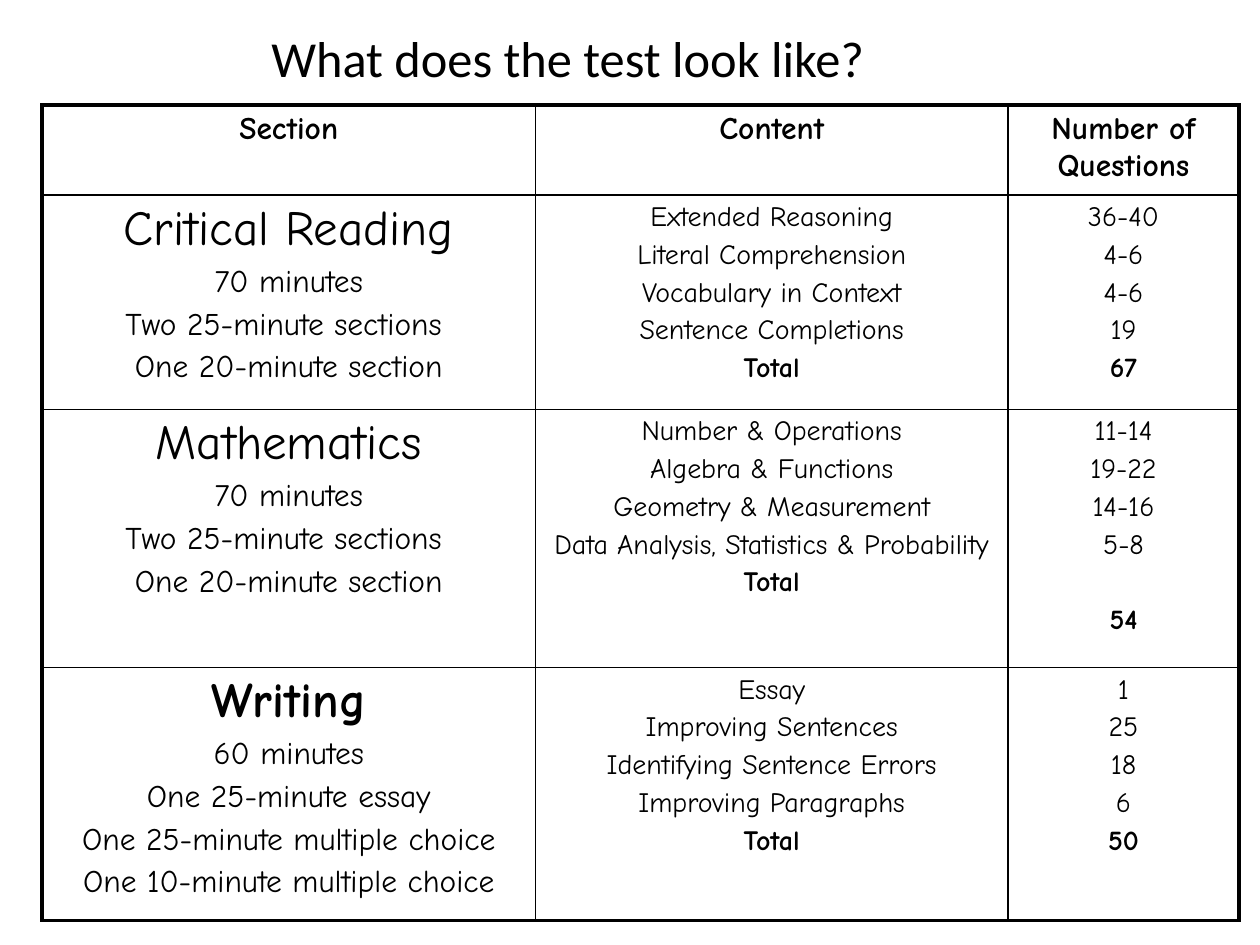
from lxml import etree
from pptx import Presentation
from pptx.dml.color import RGBColor
from pptx.enum.text import MSO_ANCHOR, PP_ALIGN
from pptx.oxml.ns import qn
from pptx.util import Pt

CENTER = PP_ALIGN.CENTER
MIDDLE = MSO_ANCHOR.MIDDLE
TOP = MSO_ANCHOR.TOP
TITLE_ONLY = 5

COLORS = {"ink": "000000"}
TITLE_FONT, TABLE_FONT = "Calibri", "Comic Neue"
HEADING_SIZE, DETAIL_SIZE, ITEM_SIZE = 28, 18, 16
SPACE_SHARE = 0.2
BLANK_LINE = 21.6
OUTER_LINE, INNER_LINE = 2.25, 1

TITLE = "What does the test look like?"
HEADERS = ["Section", "Content", "Number of Questions"]
SECTIONS = [
    {
        "name": "Critical Reading",
        "bold": False,
        "details": ["70 minutes", "Two 25-minute sections ", "One 20-minute section"],
        "content": ["Extended Reasoning", "Literal Comprehension",
                    "Vocabulary in Context", "Sentence Completions", "Total"],
        "counts": ["36-40", "4-6", "4-6", "19", "67"],
        "gap_before_total": 0,
    },
    {
        "name": "Mathematics",
        "bold": False,
        "details": ["70 minutes", "Two 25-minute sections ", "One 20-minute section"],
        "content": ["Number & Operations", "Algebra & Functions", "Geometry & Measurement",
                    "Data Analysis, Statistics & Probability", "Total"],
        "counts": ["11-14", "19-22", "14-16", "5-8", "54"],
        "gap_before_total": BLANK_LINE,
    },
    {
        "name": "Writing",
        "bold": True,
        "details": ["60 minutes", "One 25-minute essay", "One 25-minute multiple choice",
                    "One 10-minute multiple choice"],
        "content": ["Essay", "Improving Sentences", "Identifying Sentence Errors",
                    "Improving Paragraphs", "Total"],
        "counts": ["1", "25", "18", "6", "50"],
        "gap_before_total": 0,
    },
]

TABLE_LEFT, TABLE_TOP = 24, 60
COLUMN_WIDTHS = [282, 270, 132]
ROW_HEIGHTS = [51.5, 122.5, 147.5, 144.5]


def add_run(paragraph, text, font_name, size, bold=False):
    run = paragraph.add_run()
    run.text = text
    run.font.name = font_name
    run.font.size = Pt(size)
    run.font.bold = bold
    run.font.color.rgb = RGBColor.from_string(COLORS["ink"])


def set_borders(cell, widths):
    """Draw the cell's sides; widths maps L, R, T and B, in that order, to points."""
    properties = cell._tc.get_or_add_tcPr()
    for side, width in widths.items():
        line = etree.SubElement(properties, qn(f"a:ln{side}"), w=str(Pt(width)))
        fill = etree.SubElement(line, qn("a:solidFill"))
        etree.SubElement(fill, qn("a:srgbClr"), val=COLORS["ink"])


def fill_cell(cell, lines):
    """Write lines of (text, size, bold, extra space before)."""
    cell.vertical_anchor = TOP
    frame = cell.text_frame
    for index, (text, size, bold, gap) in enumerate(lines):
        paragraph = frame.add_paragraph() if index else frame.paragraphs[0]
        paragraph.alignment = CENTER
        paragraph.space_before = Pt(SPACE_SHARE * size + gap)
        add_run(paragraph, text, TABLE_FONT, size, bold)


def item_lines(items, gap_before_total=0):
    *parts, total = items
    return [(part, ITEM_SIZE, False, 0) for part in parts] + [
        (total, ITEM_SIZE, True, gap_before_total)]


def section_row(section):
    heading = [(section["name"], HEADING_SIZE, section["bold"], 0)]
    details = [(detail, DETAIL_SIZE, False, 0) for detail in section["details"]]
    return [heading + details, item_lines(section["content"]),
            item_lines(section["counts"], section["gap_before_total"])]


def add_title(slide):
    title = slide.shapes.title
    title.left, title.top, title.width, title.height = Pt(54), Pt(12), Pt(541), Pt(42)
    title.text_frame.vertical_anchor = MIDDLE
    paragraph = title.text_frame.paragraphs[0]
    paragraph.alignment = CENTER
    add_run(paragraph, TITLE, TITLE_FONT, 28.8)


def add_test_table(slide):
    rows = [[[(header, DETAIL_SIZE, True, 0)] for header in HEADERS]]
    rows += [section_row(section) for section in SECTIONS]
    table = slide.shapes.add_table(
        len(rows), len(HEADERS), Pt(TABLE_LEFT), Pt(TABLE_TOP),
        Pt(sum(COLUMN_WIDTHS)), Pt(sum(ROW_HEIGHTS))).table
    table.first_row = table.horz_banding = False
    for column, width in zip(table.columns, COLUMN_WIDTHS):
        column.width = Pt(width)
    last_row, last_column = len(rows) - 1, len(HEADERS) - 1
    for r, row in enumerate(rows):
        table.rows[r].height = Pt(ROW_HEIGHTS[r])
        for c, lines in enumerate(row):
            cell = table.cell(r, c)
            on_edge = {"L": c == 0, "R": c == last_column, "T": r == 0, "B": r == last_row}
            set_borders(cell, {side: OUTER_LINE if outer else INNER_LINE
                               for side, outer in on_edge.items()})
            cell.fill.background()
            fill_cell(cell, lines)


def main():
    presentation = Presentation()
    presentation.slide_width, presentation.slide_height = Pt(720), Pt(540)
    slide = presentation.slides.add_slide(presentation.slide_layouts[TITLE_ONLY])
    add_title(slide)
    add_test_table(slide)
    presentation.save("out.pptx")


if __name__ == "__main__":
    main()
